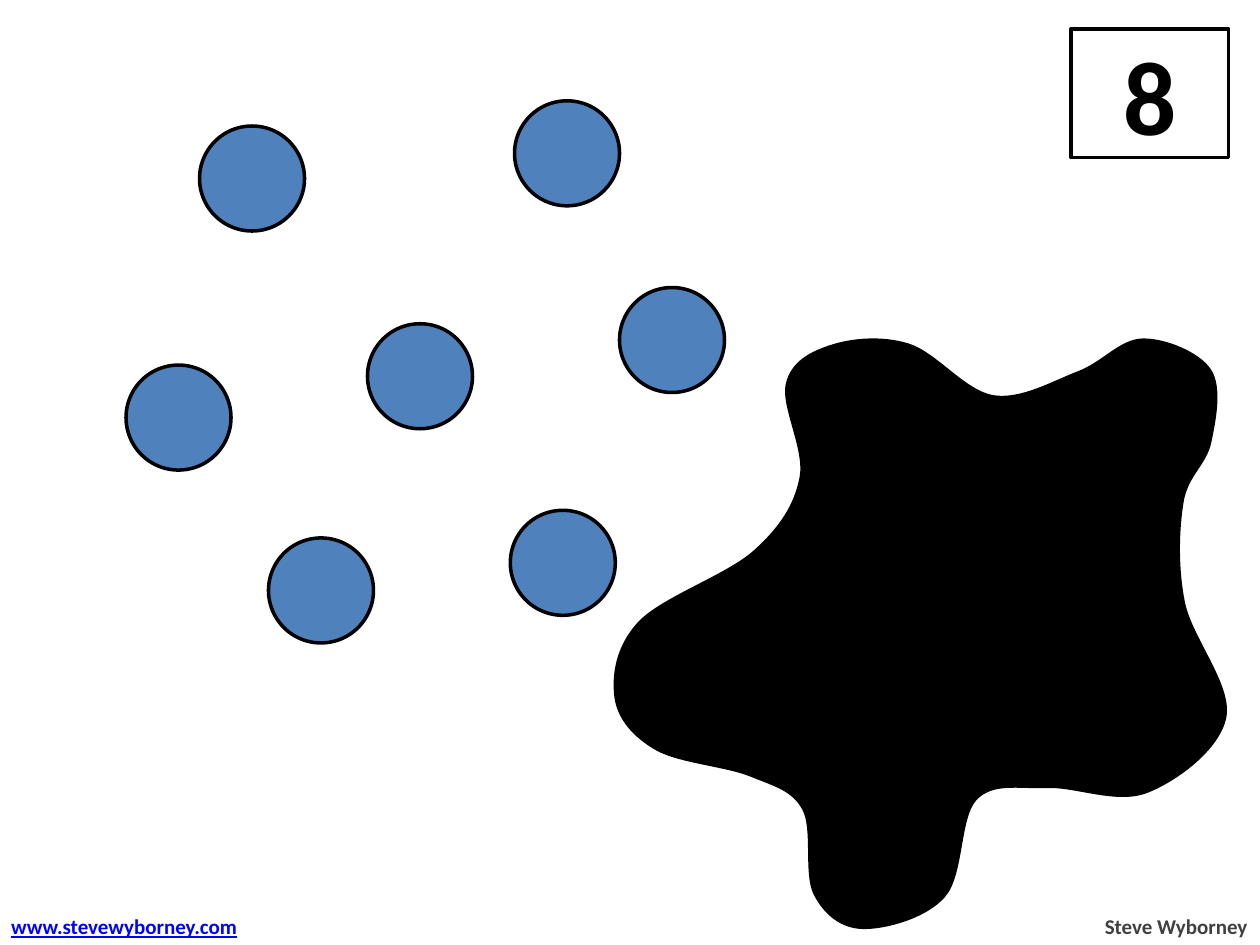
"""Build the dot-counting slide with an ink splat."""
import pptx
import pptx.util
import pptx.dml.color
import pptx.enum.shapes
import pptx.enum.text
import pptx.oxml.ns
import lxml.etree

Pt = pptx.util.Pt
RGB = pptx.dml.color.RGBColor.from_string
SHAPE = pptx.enum.shapes.MSO_SHAPE
ALIGN = pptx.enum.text.PP_ALIGN
THEME = {
    "font": "Calibri", "dot": "4F81BD", "ink": "000000", "paper": "FFFFFF",
    "link": "0000FF", "grey": "404040", "big": 60, "small": 12, "line": 2,
}


def style(shape, fill):
    shape.shadow.inherit = False
    shape.fill.solid()
    shape.fill.fore_color.rgb = RGB(THEME[fill])
    shape.line.color.rgb = RGB(THEME["ink"])
    shape.line.width = Pt(THEME["line"])


def write(shape, text, size="small", color="ink", align=ALIGN.LEFT, under=None, wrap=False):
    frame = shape.text_frame
    frame.word_wrap = wrap
    para = frame.paragraphs[0]
    para.alignment = align
    run = para.add_run()
    run.text = text
    font = run.font
    font.name, font.size, font.bold = THEME["font"], Pt(THEME[size]), True
    font.underline = under
    font.color.rgb = RGB(THEME[color])


deck = pptx.Presentation()
deck.slide_width, deck.slide_height = Pt(720), Pt(540)
slide = deck.slides.add_slide(deck.slide_layouts[6])
shapes = slide.shapes

dots = [(114, 72), (294, 57.6), (354, 164.3), (210, 185), (72, 208.6),
        (153.4, 307.4), (291.6, 291.6)]
for x, y in dots:
    dot = shapes.add_shape(SHAPE.OVAL, Pt(x), Pt(y), Pt(60), Pt(60))
    style(dot, "dot")

name = shapes.add_textbox(Pt(623.5), Pt(518.4), Pt(96.5), Pt(21.6))
write(name, "Steve Wyborney", color="grey", align=ALIGN.RIGHT)

card = shapes.add_shape(SHAPE.RECTANGLE, Pt(612), Pt(16.5), Pt(90), Pt(73.5))
style(card, "paper")
card.text_frame.vertical_anchor = pptx.enum.text.MSO_ANCHOR.MIDDLE
write(card, "8", size="big", align=ALIGN.CENTER, wrap=True)

knots = [
    (375.1, 427.7), (352.1, 398.2), (365.8, 355.7), (431.3, 315.4),
    (457.9, 272.9), (450, 219.6), (475.2, 198), (519.1, 197.3),
    (567.4, 226.8), (616.3, 213.1), (653, 194.4), (691.2, 211.7),
    (691.2, 252.7), (675.4, 286.6), (676.1, 344.2), (699.8, 409.7),
    (655.2, 452.2), (598.3, 449.3), (557.3, 456.5), (539.3, 511.9),
    (493.2, 529.9), (465.8, 510.5), (459.4, 462.2), (429.1, 442.8),
]
curve = []
count = len(knots)
for i in range(count):
    prev, start, end, after = [knots[(i + k) % count] for k in (-1, 0, 1, 2)]
    lead = [s + (e - p) / 6 for p, s, e in zip(prev, start, end)]
    trail = [e - (a - s) / 6 for s, e, a in zip(start, end, after)]
    curve += [(Pt(x), Pt(y)) for x, y in (lead, trail, end)]
pen = shapes.build_freeform(Pt(knots[0][0]), Pt(knots[0][1]))
pen.add_line_segments(curve, close=True)
splat = pen.convert_to_shape()
style(splat, "ink")

qn = pptx.oxml.ns.qn
lines = list(splat.element.iter(qn("a:lnTo")))
for i in range(0, len(lines), 3):
    bend = lxml.etree.Element(qn("a:cubicBezTo"))
    lines[i].addprevious(bend)
    for line in lines[i:i + 3]:
        bend.append(line[0])
        line.getparent().remove(line)

site = shapes.add_textbox(Pt(-0.7), Pt(518.4), Pt(147.6), Pt(21.6))
write(site, "www.stevewyborney.com", color="link", under=True)

deck.save("out.pptx")
